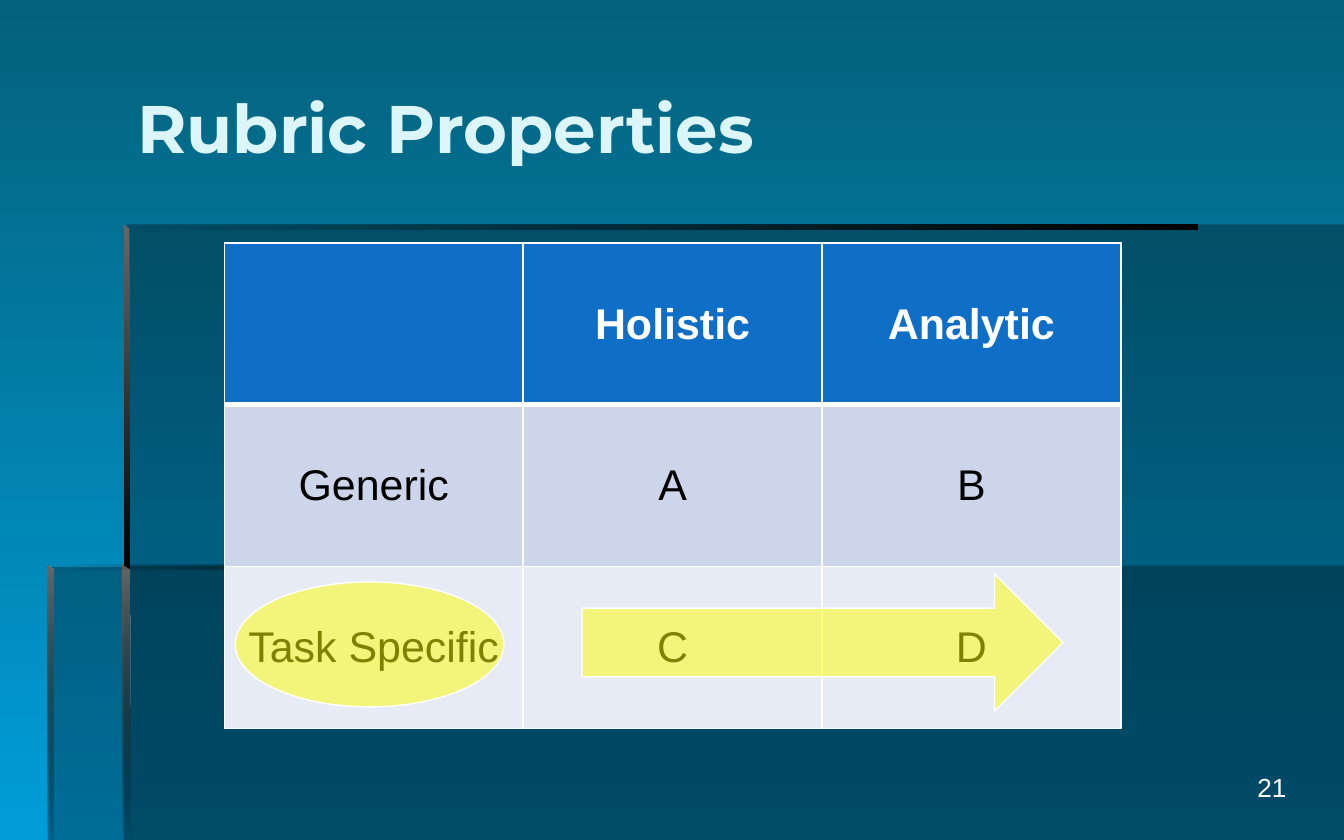
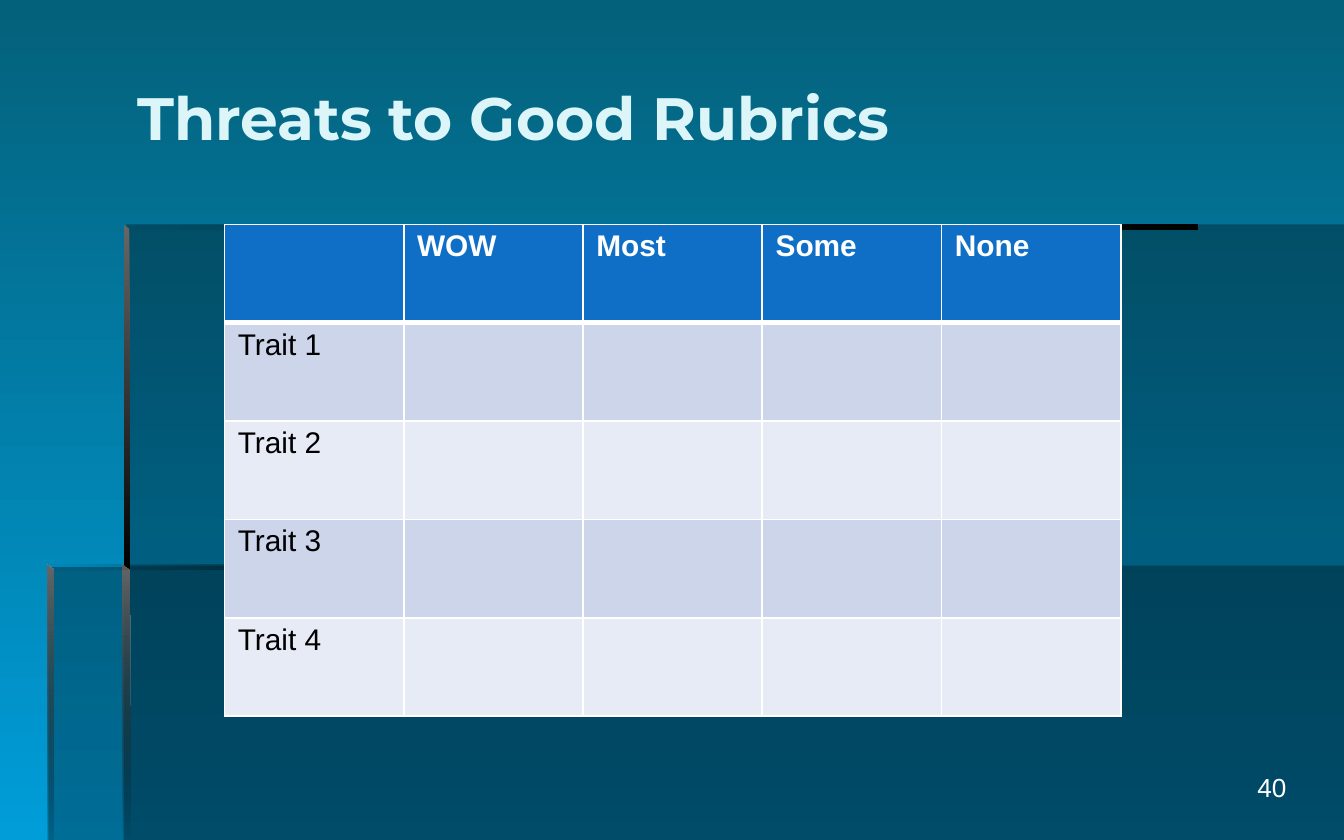
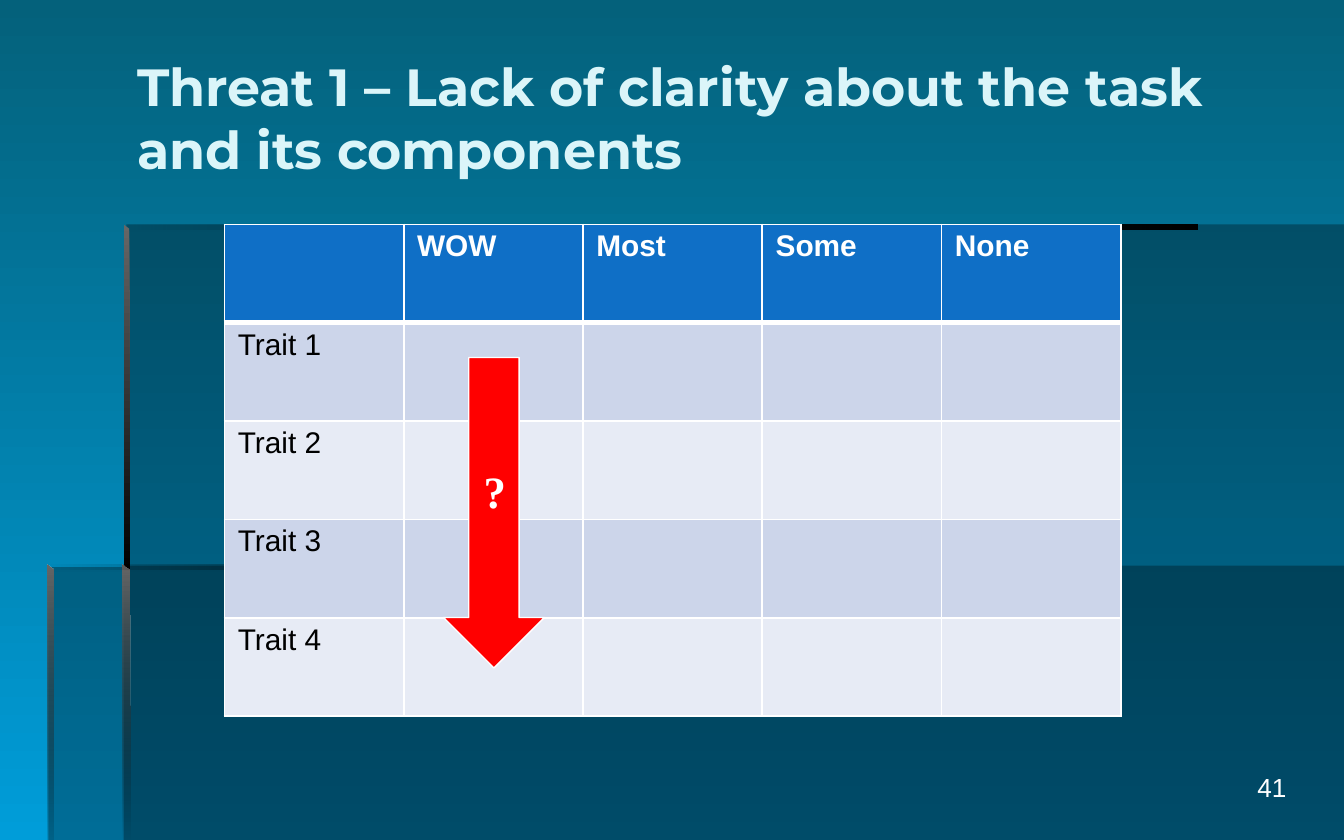
from lxml.etree import SubElement
from pptx import Presentation
from pptx.dml.color import RGBColor
from pptx.enum.shapes import MSO_SHAPE
from pptx.enum.text import MSO_ANCHOR, MSO_AUTO_SIZE, PP_ALIGN
from pptx.oxml.ns import qn
from pptx.util import Pt

PX = 9144
WIDTH, HEIGHT = 1000, 625
COLORS = {
    "bg_top": "04617B",
    "bg_bottom": "009DD9",
    "title": "DBF5F9",
    "header": "0F6FC6",
    "band_dark": "CCD5EA",
    "band_light": "E7EBF5",
    "white": "FFFFFF",
    "black": "000000",
    "bevel": "666666",
    "highlight": "FFFF00",
    "warning": "FF0000",
}
PANELS = [
    [(92, 421), (92, HEIGHT), (WIDTH, HEIGHT), (WIDTH, 421)],
    [(94, 422), (36, 422), (36, HEIGHT), (WIDTH, HEIGHT), (WIDTH, 167), (94, 167)],
]
EDGES = [
    ([(92, 167), (92, 171), (891, 171), (891, 167)], "black", 0, 100, 0),
    ([(92, 167), (92, 425), (97, 425), (96, 170)], "bevel", 100, 100, 90),
    ([(91, HEIGHT), (97, HEIGHT), (96, 424), (91, 420)], "bevel", 100, 0, 90),
    ([(35, 420), (35, 424), (535, 424), (535, 420)], "black", 0, 100, 0),
    ([(35, 420), (35, HEIGHT), (40, HEIGHT), (40, 424)], "bevel", 100, 10, 90),
]
TRAITS = [["", "WOW", "Most", "Some", "None"]] + [
    [f"Trait {n}", "", "", "", ""] for n in range(1, 5)
]


def rgb(name):
    return RGBColor.from_string(COLORS[name])


def emu(*lengths):
    return [n * PX for n in lengths]


def write(tf, text, size=16, font="Arial", color="white", bold=False,
          align=PP_ALIGN.LEFT):
    p = tf.paragraphs[0]
    p.alignment = align
    r = p.add_run()
    r.text = text
    r.font.size = Pt(size)
    r.font.name = font
    r.font.bold = bold
    r.font.color.rgb = rgb(color)


def set_gradient(fill, start, end, angle):
    fill.gradient()
    fill.gradient_angle = (360 - angle) % 360
    for stop, name in zip(fill.gradient_stops, (start, end)):
        stop.color.rgb = rgb(name)


def set_opacity(sp, *percents):
    colors = list(sp._element.spPr.iter(qn("a:srgbClr")))
    for color, percent in zip(colors, percents):
        if percent < 100:
            SubElement(color, qn("a:alpha"), val=str(percent * 1000))


def set_borders(cell, **widths):
    tcPr = cell._tc.get_or_add_tcPr()
    for i, side in enumerate("LRTB"):
        ln = SubElement(tcPr, qn(f"a:ln{side}"), w=str(Pt(widths.get(side, 1))))
        fill = SubElement(ln, qn("a:solidFill"))
        SubElement(fill, qn("a:srgbClr"), val=COLORS["white"])
        tcPr.insert(i, ln)


class Deck:
    def __init__(self):
        self.prs = Presentation()
        self.prs.slide_width, self.prs.slide_height = emu(WIDTH, HEIGHT)
        self.layout = self.prs.slide_layouts[5]
        self.s = None
        set_gradient(self.prs.slide_master.background.fill,
                     "bg_top", "bg_bottom", 90)

    def slide(self, title, number, box, size):
        first = self.s is None
        self.s = self.prs.slides.add_slide(self.layout)
        if first:
            self.frame()
        sp = self.s.shapes.title
        sp.left, sp.top, sp.width, sp.height = emu(*box)
        tf = sp.text_frame
        tf.word_wrap = True
        tf.auto_size = MSO_AUTO_SIZE.NONE
        tf.vertical_anchor = MSO_ANCHOR.MIDDLE
        write(tf, title, size=size, font="Montserrat", color="title", bold=True)
        self.text(str(number), (759, 569, 208, 43), size=14, align=PP_ALIGN.RIGHT)

    def frame(self):
        for ph in list(self.layout.placeholders):
            if ph.placeholder_format.idx:
                ph._element.getparent().remove(ph._element)
        for points in PANELS:
            sp = self.outline(points)
            sp.fill.solid()
            sp.fill.fore_color.rgb = rgb("black")
            set_opacity(sp, 30)
        for points, start, start_opacity, end_opacity, angle in EDGES:
            sp = self.outline(points)
            set_gradient(sp.fill, start, "black", angle)
            set_opacity(sp, start_opacity, end_opacity)

    def outline(self, points):
        builder = self.s.shapes.build_freeform(*points[0], scale=PX)
        builder.add_line_segments(points[1:], close=True)
        sp = builder.convert_to_shape()
        sp.shadow.inherit = False
        sp.line.fill.background()
        self.layout.shapes._spTree.append(sp._element)
        return sp

    def text(self, text, box, grow=False, **style):
        tf = self.s.shapes.add_textbox(*emu(*box)).text_frame
        tf.word_wrap = True
        if grow:
            tf.auto_size = MSO_AUTO_SIZE.SHAPE_TO_FIT_TEXT
        write(tf, text, **style)

    def table(self, rows, box, anchor=MSO_ANCHOR.TOP, **style):
        table = self.s.shapes.add_table(len(rows), len(rows[0]), *emu(*box)).table
        for i, row in enumerate(rows):
            band = "header" if i == 0 else "band_dark" if i % 2 else "band_light"
            for j, text in enumerate(row):
                cell = table.cell(i, j)
                cell.fill.solid()
                cell.fill.fore_color.rgb = rgb(band)
                cell.margin_top = cell.margin_bottom = 4 * PX
                cell.vertical_anchor = anchor
                set_borders(cell, T=3 if i == 1 else 1, B=3 if i == 0 else 1)
                if text:
                    write(cell.text_frame, text, bold=i == 0,
                          color="black" if i else "white", **style)

    def shape(self, kind, box, color, opacity=100):
        sp = self.s.shapes.add_shape(kind, *emu(*box))
        sp.shadow.inherit = False
        sp.fill.solid()
        sp.fill.fore_color.rgb = rgb(color)
        sp.line.color.rgb = rgb("white")
        sp.line.width = Pt(0.75)
        set_opacity(sp, opacity)


def main():
    deck = Deck()
    wide_title = (92, 22, 875, 130)
    trait_box = (167, 167, 667, 366)

    deck.slide("Rubric Properties", 21, (92, 42, 792, 104), 36)
    deck.table(
        [["", "Holistic", "Analytic"], ["Generic", "A", "B"],
         ["Task Specific", "C", "D"]],
        (167, 181, 667, 361), anchor=MSO_ANCHOR.MIDDLE, size=23,
        align=PP_ALIGN.CENTER)
    deck.shape(MSO_SHAPE.OVAL, (175, 433, 200, 93), "highlight", 50)
    deck.shape(MSO_SHAPE.RIGHT_ARROW, (433, 427, 358, 102), "highlight", 50)

    deck.slide("Threats to Good Rubrics", 40, wide_title, 32)
    deck.table(TRAITS, trait_box)

    deck.slide("Threat 1 – Lack of clarity about the task and its components",
               41, wide_title, 28)
    deck.table(TRAITS, trait_box)
    deck.shape(MSO_SHAPE.DOWN_ARROW, (330, 266, 75, 231), "warning")
    deck.text("?", (350, 340, 33, 50), grow=True, size=24,
              font="Times New Roman", bold=True)

    deck.prs.save("out.pptx")


if __name__ == "__main__":
    main()
